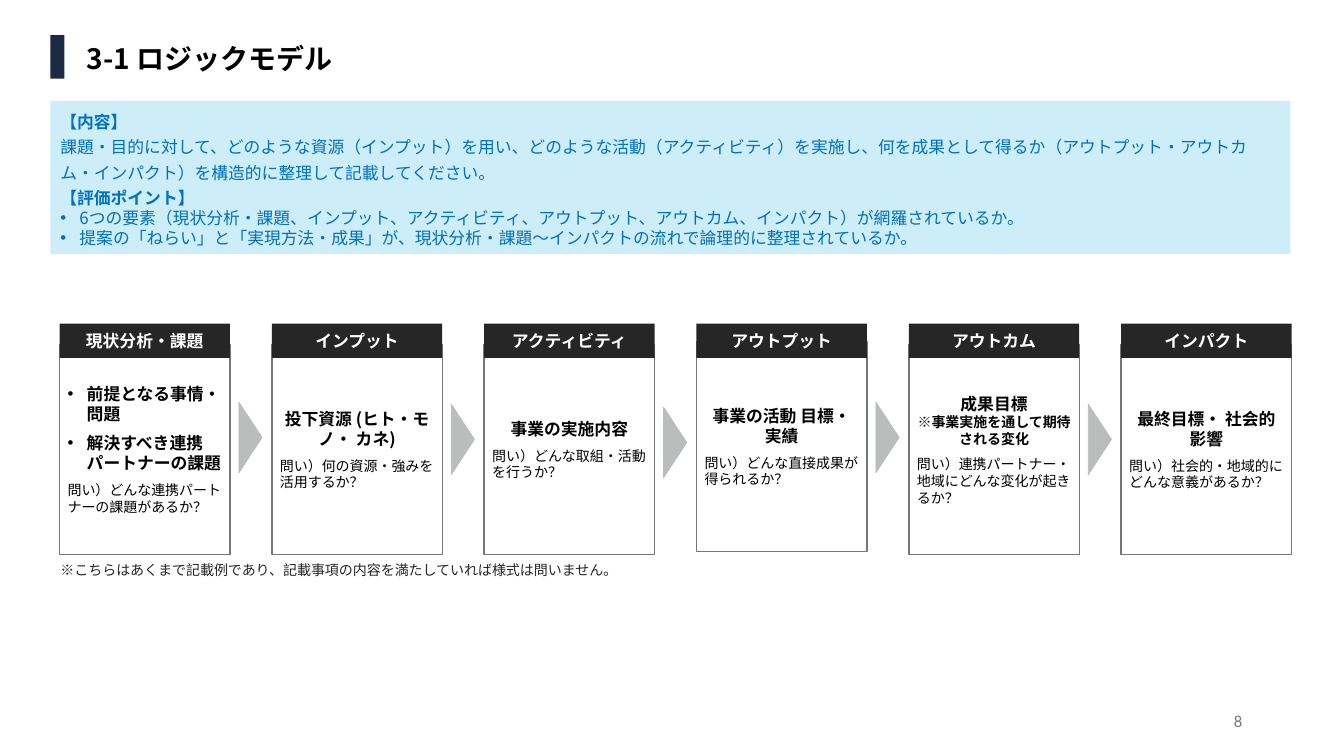
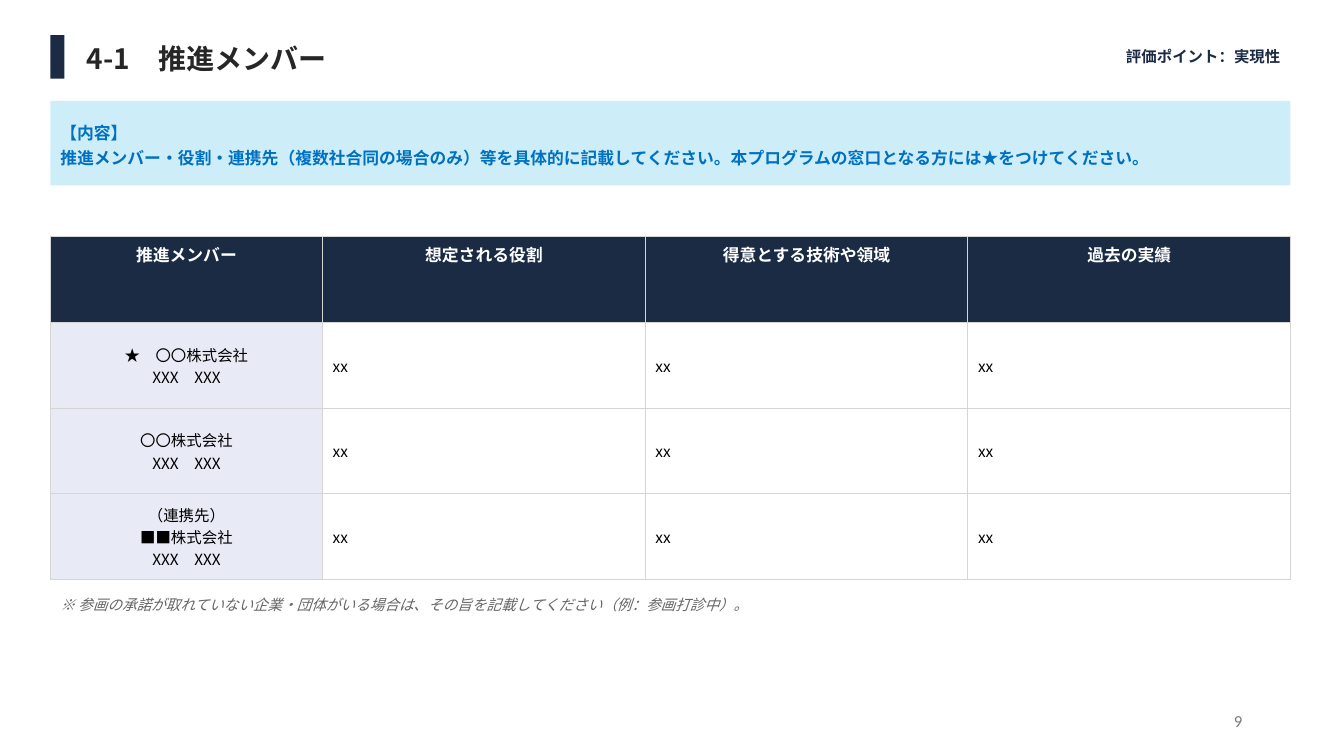
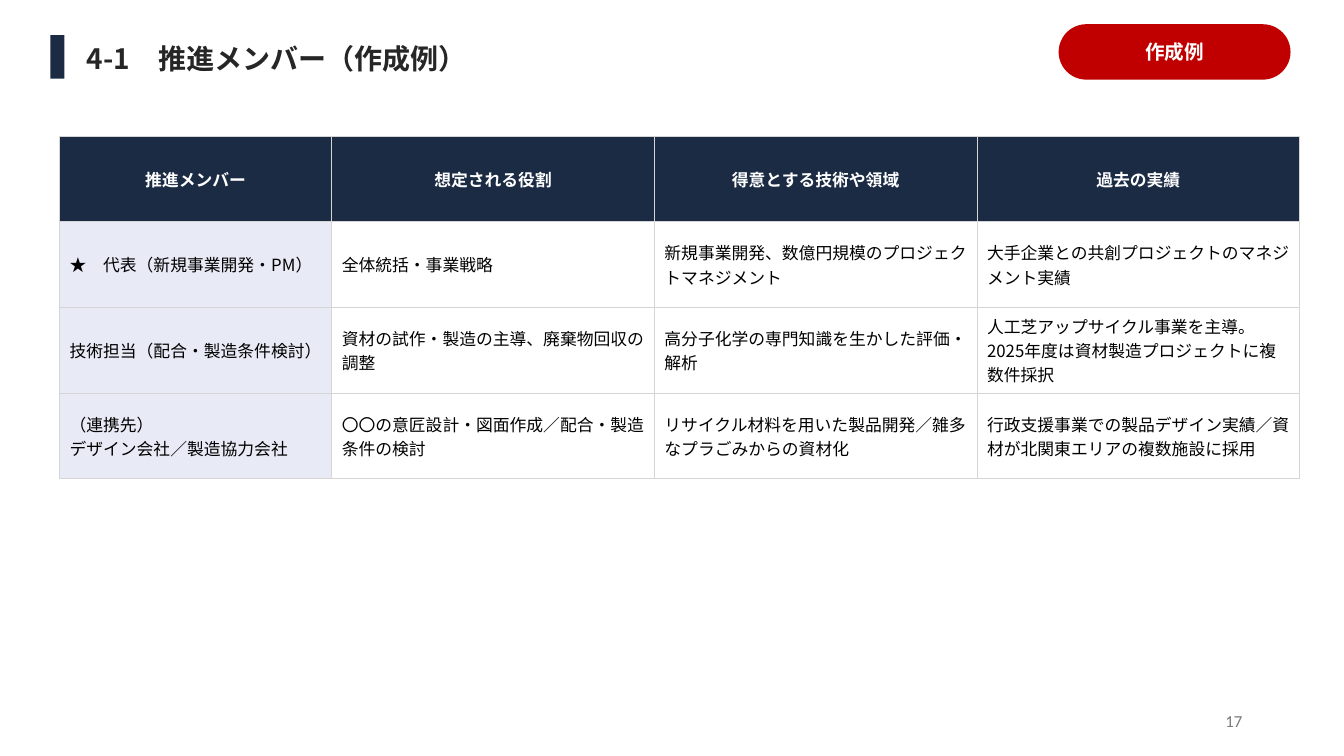
from dataclasses import dataclass, replace
from typing import Optional

from lxml.etree import SubElement
from pptx import Presentation
from pptx.dml.color import RGBColor
from pptx.enum.shapes import MSO_SHAPE
from pptx.enum.text import MSO_ANCHOR, MSO_AUTO_SIZE, PP_ALIGN
from pptx.oxml.ns import qn
from pptx.presentation import Presentation as Deck
from pptx.shapes.autoshape import Shape
from pptx.slide import Slide
from pptx.table import _Cell
from pptx.text.text import TextFrame, _Paragraph
from pptx.util import Emu, Inches, Pt

FONT = "Noto Sans CJK JP"
NAVY, BLACK, DARK, WHITE = "1B2B44", "000000", "262626", "FFFFFF"
BLUE, PALE_BLUE, LAVENDER, RED = "0070C0", "CDEEF9", "E8EAF5", "C00000"
GRAY, MID_GRAY, LIGHT_GRAY, NOTE_GRAY, PAGE_GRAY = "75787B", "BBBCBC", "D5D5D5", "666666", "797979"
LEFT, CENTER, RIGHT = PP_ALIGN.LEFT, PP_ALIGN.CENTER, PP_ALIGN.RIGHT
MIDDLE, TOP = MSO_ANCHOR.MIDDLE, MSO_ANCHOR.TOP
CARD_LEFT, CARD_WIDTH = 0.59, 1.69
CARD_PITCH = (11.12 - CARD_LEFT) / 5
COLUMNS = (2.7, 3.2, 3.2, 3.2)
ROW_HEIGHT = 0.85
HEADINGS = ("推進メンバー", "想定される役割", "得意とする技術や領域", "過去の実績")


@dataclass(frozen=True)
class Box:
    left: float
    top: float
    width: float
    height: float

    def emu(self) -> tuple[Emu, Emu, Emu, Emu]:
        return Inches(self.left), Inches(self.top), Inches(self.width), Inches(self.height)


@dataclass(frozen=True)
class Para:
    text: str
    size: float = 12
    color: str = BLACK
    bold: bool = False
    italic: bool = False
    align: PP_ALIGN = LEFT
    before: float = 0
    spacing: Optional[float] = None
    bullet: bool = False
    font: str = FONT


@dataclass(frozen=True)
class Card:
    heading: str
    body: tuple[Para, ...]
    top: float = 3.42
    arrow_top: Optional[float] = None


def rgb(value: str) -> RGBColor:
    return RGBColor.from_string(value)


def set_bullet(p: _Paragraph) -> None:
    props = p._p.get_or_add_pPr()
    props.set("marL", str(Inches(0.19)))
    props.set("indent", str(-Inches(0.19)))
    SubElement(props, qn("a:buFont")).set("typeface", "Arial")
    SubElement(props, qn("a:buChar")).set("char", "•")


def format_paragraph(p: _Paragraph, para: Para) -> None:
    p.text = para.text
    p.alignment = para.align
    if para.bullet:
        set_bullet(p)
    if para.before:
        p.space_before = Pt(para.before)
    if para.spacing:
        p.line_spacing = para.spacing
    font = p.font
    font.name, font.size = para.font, Pt(para.size)
    font.bold, font.italic = para.bold, para.italic
    font.color.rgb = rgb(para.color)
    defaults = p._p.pPr.find(qn("a:defRPr"))
    SubElement(defaults, qn("a:ea")).set("typeface", para.font)


def write(tf: TextFrame, paras: tuple[Para, ...], inset: Optional[float] = None) -> None:
    tf.word_wrap = True
    tf.auto_size = MSO_AUTO_SIZE.NONE
    tf.vertical_anchor = MIDDLE
    if inset is not None:
        tf.margin_left = tf.margin_right = tf.margin_top = tf.margin_bottom = Inches(inset)
    for i, para in enumerate(paras):
        format_paragraph(tf.add_paragraph() if i else tf.paragraphs[0], para)


def add_text(s: Slide, box: Box, para: Para, inset: Optional[float] = None) -> None:
    write(s.shapes.add_textbox(*box.emu()).text_frame, (para,), inset)


def add_block(s: Slide, box: Box, fill: str, paras: tuple[Para, ...] = (),
              inset: Optional[float] = None, line: Optional[str] = None,
              line_width: float = 1, kind: MSO_SHAPE = MSO_SHAPE.RECTANGLE) -> Shape:
    sp = s.shapes.add_shape(kind, *box.emu())
    sp.shadow.inherit = False
    sp.fill.solid()
    sp.fill.fore_color.rgb = rgb(fill)
    if line:
        sp.line.color.rgb = rgb(line)
        sp.line.width = Pt(line_width)
    else:
        sp.line.fill.background()
    if paras:
        write(sp.text_frame, paras, inset)
    return sp


def add_slide(prs: Deck, title: str, page: int, color: str = DARK) -> Slide:
    s = prs.slides.add_slide(prs.slide_layouts[5])
    add_block(s, Box(0.5, 0.35, 0.14, 0.43), NAVY)
    holder = s.shapes.title
    holder.left, holder.top, holder.width, holder.height = Box(0.76, 0.36, 12.13, 0.43).emu()
    write(holder.text_frame, (Para(title, 20, color, bold=True),))
    add_text(s, Box(9.42, 6.95, 3, 0.4), Para(str(page), 12, PAGE_GRAY, align=RIGHT, font="Calibri"))
    return s


def add_guide(s: Slide, height: float, paras: tuple[Para, ...]) -> None:
    add_block(s, Box(0.5, 1, 12.3, height), PALE_BLUE, paras)


def guide(text: str, bold: bool = False) -> Para:
    return Para(text, color=BLUE, bold=bold, spacing=1.25)


def lead(text: str) -> Para:
    return Para(text, bold=True, align=CENTER)


def question(text: str) -> Para:
    return Para(text, 10, before=6)


def add_card(s: Slide, index: int, card: Card) -> None:
    left = CARD_LEFT + index * CARD_PITCH
    add_block(s, Box(left, card.top, CARD_WIDTH, 2.08), WHITE, card.body, 0.08, GRAY)
    add_block(s, Box(left, 3.21, CARD_WIDTH, 0.34), DARK,
              (Para(card.heading, color=WHITE, bold=True, align=CENTER),), 0)
    if card.arrow_top:
        arrow = add_block(s, Box(left + 1.78, card.arrow_top, 0.23, 0.7), MID_GRAY,
                          line=MID_GRAY, line_width=0.5, kind=MSO_SHAPE.PENTAGON)
        arrow.adjustments[0] = 1


def format_cell(cell: _Cell, text: str, style: Para, fill: str, anchor: MSO_ANCHOR) -> None:
    write(cell.text_frame, tuple(replace(style, text=line) for line in text.split("\n")))
    cell.vertical_anchor = anchor
    props = cell._tc.get_or_add_tcPr()
    for side in ("lnL", "lnR", "lnT", "lnB"):
        border = SubElement(props, qn(f"a:{side}"), w=str(Pt(0.75)))
        SubElement(SubElement(border, qn("a:solidFill")), qn("a:srgbClr")).set("val", LIGHT_GRAY)
    cell.fill.solid()
    cell.fill.fore_color.rgb = rgb(fill)


def add_members(s: Slide, left: float, top: float, rows: tuple[tuple[str, ...], ...],
                size: float, name_align: PP_ALIGN, heading_anchor: MSO_ANCHOR) -> None:
    box = Box(left, top, sum(COLUMNS), ROW_HEIGHT * (len(rows) + 1))
    table = s.shapes.add_table(len(rows) + 1, len(COLUMNS), *box.emu()).table
    table.horz_banding = False
    for column, width in zip(table.columns, COLUMNS):
        column.width = Inches(width)
    for row in table.rows:
        row.height = Inches(ROW_HEIGHT)
    heading = Para("", color=WHITE, bold=True, align=CENTER)
    for c, text in enumerate(HEADINGS):
        format_cell(table.cell(0, c), text, heading, NAVY, heading_anchor)
    for r, row_texts in enumerate(rows, 1):
        for c, text in enumerate(row_texts):
            style = Para("", size, align=LEFT if c else name_align)
            format_cell(table.cell(r, c), text, style, WHITE if c else LAVENDER, MIDDLE)


CARDS = (
    Card("現状分析・課題", (
        Para("前提となる事情・問題", bold=True, bullet=True),
        Para("解決すべき連携パートナーの課題", bold=True, bullet=True, before=6),
        question("問い）どんな連携パートナーの課題があるか？")), arrow_top=3.99),
    Card("インプット", (
        lead("投下資源 (ヒト・モノ・ カネ)"),
        question("問い）何の資源・強みを活用するか？")), arrow_top=4.01),
    Card("アクティビティ", (
        lead("事業の実施内容"),
        question("問い）どんな取組・活動を行うか？")), arrow_top=4.04),
    Card("アウトプット", (
        lead("事業の活動 目標・実績"),
        question("問い）どんな直接成果が得られるか？")), top=3.39, arrow_top=3.99),
    Card("アウトカム", (
        lead("成果目標"),
        Para("※事業実施を通して期待される変化", 10, bold=True, align=CENTER),
        question("問い）連携パートナー・地域にどんな変化が起きるか？")), arrow_top=4.01),
    Card("インパクト", (
        lead("最終目標・ 社会的影響"),
        question("問い）社会的・地域的にどんな意義があるか？"))),
)

BLANKS = ("xx",) * 3
TEMPLATE_ROWS = (
    ("★　〇〇株式会社\nXXX　XXX", *BLANKS),
    ("〇〇株式会社\nXXX　XXX", *BLANKS),
    ("（連携先）\n■■株式会社\nXXX　XXX", *BLANKS),
)
EXAMPLE_ROWS = (
    ("★　代表（新規事業開発・PM）", "全体統括・事業戦略",
     "新規事業開発、数億円規模のプロジェクトマネジメント",
     "大手企業との共創プロジェクトのマネジメント実績"),
    ("技術担当（配合・製造条件検討）", "資材の試作・製造の主導、廃棄物回収の調整",
     "高分子化学の専門知識を生かした評価・解析",
     "人工芝アップサイクル事業を主導。2025年度は資材製造プロジェクトに複数件採択"),
    ("（連携先）\nデザイン会社／製造協力会社", "〇〇の意匠設計・図面作成／配合・製造条件の検討",
     "リサイクル材料を用いた製品開発／雑多なプラごみからの資材化",
     "行政支援事業での製品デザイン実績／資材が北関東エリアの複数施設に採用"),
)


def add_logic_model(prs: Deck) -> None:
    s = add_slide(prs, "3-1 ロジックモデル", 8, BLACK)
    add_guide(s, 1.52, (
        guide("【内容】", True),
        guide("課題・目的に対して、どのような資源（インプット）を用い、どのような活動（アクティビティ）を実施し、"
              "何を成果として得るか（アウトプット・アウトカム・インパクト）を構造的に整理して記載してください。"),
        guide("【評価ポイント】", True),
        Para("6つの要素（現状分析・課題、インプット、アクティビティ、アウトプット、アウトカム、インパクト）"
             "が網羅されているか。", color=BLUE, bullet=True),
        Para("提案の「ねらい」と「実現方法・成果」が、現状分析・課題～インパクトの流れで論理的に整理されているか。",
             color=BLUE, bullet=True)))
    add_text(s, Box(0.52, 5.51, 7.05, 0.27),
             Para("※こちらはあくまで記載例であり、記載事項の内容を満たしていれば様式は問いません。",
                  10, DARK, spacing=1.06), 0.08)
    for i, card in enumerate(CARDS):
        add_card(s, i, card)


def add_member_template(prs: Deck) -> None:
    s = add_slide(prs, "4-1　推進メンバー", 9)
    add_members(s, 0.5, 2.35, TEMPLATE_ROWS, 11, CENTER, TOP)
    add_text(s, Box(0.5, 5.85, 12.3, 0.3),
             Para("※ 参画の承諾が取れていない企業・団体がいる場合は、その旨を記載してください（例：参画打診中）。",
                  10.5, NOTE_GRAY, italic=True))
    add_guide(s, 0.84, (
        guide("【内容】", True),
        guide("推進メンバー・役割・連携先（複数社合同の場合のみ）等を具体的に記載してください。"
              "本プログラムの窓口となる方には★をつけてください。", True)))
    add_text(s, Box(9, 0.35, 3.8, 0.42), Para("評価ポイント：実現性", 11, NAVY, bold=True, align=RIGHT))


def add_member_example(prs: Deck) -> None:
    s = add_slide(prs, "4-1　推進メンバー（作成例）", 17)
    add_members(s, 0.59, 1.35, EXAMPLE_ROWS, 12, LEFT, MIDDLE)
    badge = add_block(s, Box(10.5, 0.24, 2.3, 0.55), RED,
                      (Para("作成例", 14, WHITE, bold=True, align=CENTER),),
                      kind=MSO_SHAPE.ROUNDED_RECTANGLE)
    badge.adjustments[0] = 0.5


def main() -> None:
    prs = Presentation()
    prs.slide_width, prs.slide_height = Inches(13.33), Inches(7.5)
    add_logic_model(prs)
    add_member_template(prs)
    add_member_example(prs)
    prs.save("out.pptx")


if __name__ == "__main__":
    main()
